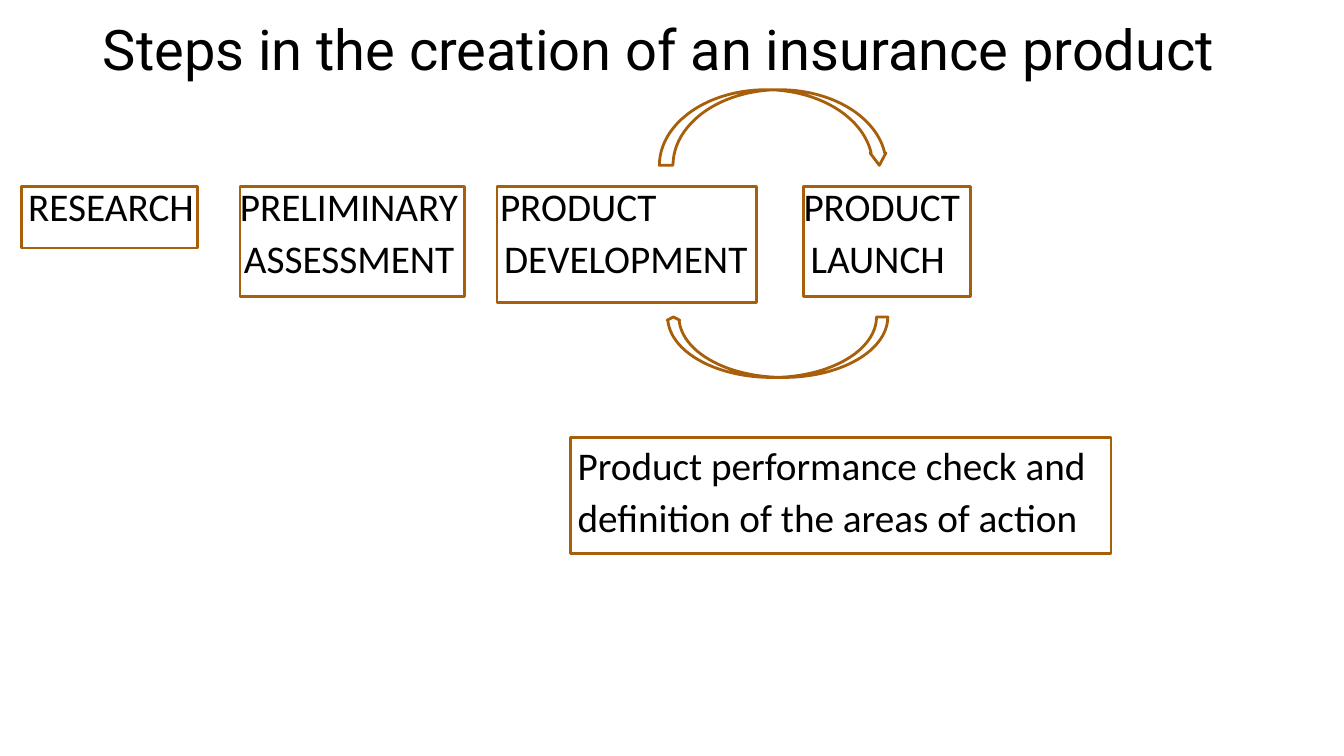
from pptx import Presentation
from pptx.dml.color import RGBColor
from pptx.enum.shapes import MSO_SHAPE as Kind
from pptx.enum.text import MSO_ANCHOR as Anchor, PP_ALIGN as Align
from pptx.util import Inches, Pt

BROWN = RGBColor(0xA7, 0x5F, 0x0A)
BLACK = RGBColor(0, 0, 0)

TITLE = "Steps in the creation of an insurance product"
ROW = 1.85
STEPS = [
    (0.21, ROW, 1.75, 0.61, 0.05, [("RESEARCH", 0.07)]),
    (2.38, ROW, 2.23, 1.09, 0.05, [("PRELIMINARY", 0), ("ASSESSMENT", 0.04)]),
    (4.93, ROW, 2.57, 1.15, 0.05, [("PRODUCT", 0.03), ("DEVELOPMENT", 0.07)]),
    (7.97, ROW, 1.66, 1.09, 0.05, [("PRODUCT", 0), ("LAUNCH", 0.07)]),
    (5.66, 4.34, 5.36, 1.15, 0.13, [
        ("Product performance check and", 0.07),
        ("definition of the areas of action", 0.07)]),
]
ARROWS = [
    (Kind.CURVED_DOWN_ARROW, (6.54, 0.89, 2.26, 0.75), 0, (0.18, 0.207, 0.162)),
    (Kind.CURVED_LEFT_ARROW, (7.41, 2.35, 0.6, 2.19), 90, (0.187, 0.209, 0.054)),
]


def style(par, font, size, lead):
    par.alignment = Align.LEFT
    par.line_spacing = lead
    for run in par.runs:
        run.font.name = font
        run.font.size = Pt(size)
        run.font.color.rgb = BLACK


def outline(slide, kind, *place):
    shape = slide.shapes.add_shape(kind, *map(Inches, place))
    shape.shadow.inherit = False
    shape.fill.background()
    shape.line.color.rgb = BROWN
    shape.line.width = Pt(2)
    return shape


def add_step(slide, left, top, width, height, inset, lines):
    frame = outline(slide, Kind.RECTANGLE, left, top, width, height).text_frame
    frame.word_wrap = True
    frame.vertical_anchor = Anchor.TOP
    frame.margin_left = frame.margin_right = 0
    frame.margin_top = Inches(inset)
    frame.text = "\n".join(text for text, _ in lines)
    for i, (par, (_, indent)) in enumerate(zip(frame.paragraphs, lines)):
        style(par, "Calibri", 28, 0.8)
        par.space_before = Pt(10 if i else 0)
        par._p.get_or_add_pPr().set("marL", str(Inches(indent)))


def main():
    deck = Presentation()
    deck.slide_width, deck.slide_height = Inches(13.33), Inches(7.5)
    slide = deck.slides.add_slide(deck.slide_layouts[5])

    title = slide.shapes.title
    title.left, title.top = Inches(0.92), Inches(-0.21)
    title.width, title.height = Inches(11.5), Inches(1.45)
    title.text_frame.text = TITLE
    title.text_frame.vertical_anchor = Anchor.MIDDLE
    style(title.text_frame.paragraphs[0], "Roboto", 40, 0.9)

    for step in STEPS:
        add_step(slide, *step)
    for kind, place, turn, bends in ARROWS:
        arrow = outline(slide, kind, *place)
        arrow.rotation = turn
        for i, bend in enumerate(bends):
            arrow.adjustments[i] = bend

    deck.save("out.pptx")


if __name__ == "__main__":
    main()
